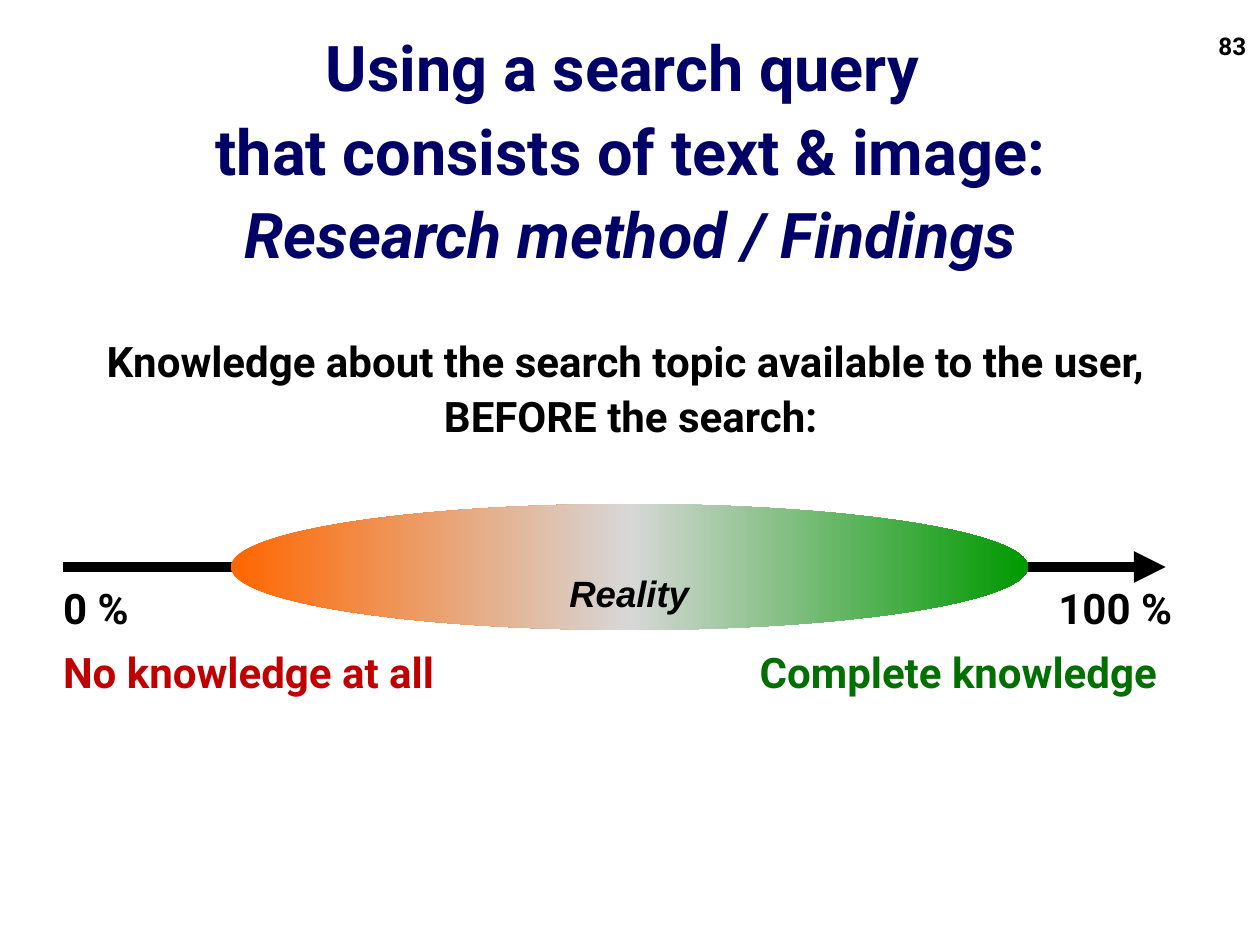
from lxml import etree
from copy import deepcopy
from pptx import Presentation
from pptx.dml.color import RGBColor
from pptx.enum.shapes import MSO_CONNECTOR, MSO_SHAPE
from pptx.enum.text import MSO_ANCHOR, MSO_AUTO_SIZE, PP_ALIGN
from pptx.oxml.ns import qn
from pptx.util import Inches, Pt


def color(hex_string):
    return RGBColor.from_string(hex_string)


def place(shape, left, top, width, height):
    shape.left, shape.top = Inches(left), Inches(top)
    shape.width, shape.height = Inches(width), Inches(height)


def set_frame(frame, side, top, bottom, anchor=MSO_ANCHOR.TOP):
    frame.word_wrap = True
    frame.auto_size = MSO_AUTO_SIZE.NONE
    frame.vertical_anchor = anchor
    frame.margin_left = frame.margin_right = Inches(side)
    frame.margin_top, frame.margin_bottom = Inches(top), Inches(bottom)


def style(paragraph, size, hex_string, name="Roboto", italic=None):
    font = paragraph.font
    font.name, font.size, font.bold, font.italic = name, Pt(size), True, italic
    font.color.rgb = color(hex_string)


def add_lines(paragraph, lines):
    for index, line in enumerate(lines):
        if index:
            paragraph.add_line_break()
        paragraph.add_run().text = line


def add_subscript(paragraph, text):
    run = paragraph.add_run()
    run.text = text
    run._r.get_or_add_rPr().set("baseline", "-25000")


def add_title(slide, left, top, width, height):
    title = slide.shapes.title
    place(title, left, top, width, height)
    set_frame(title.text_frame, 0.08, 0.09, 0.08)
    paragraph = title.text_frame.paragraphs[0]
    paragraph.alignment = PP_ALIGN.CENTER
    paragraph.line_spacing = 1.1
    add_lines(paragraph, ["Using a search query ", "that consists of text & image: "])
    subtitle = paragraph.add_run()
    subtitle.text = "Research method / Findings"
    subtitle.font.italic = True
    style(paragraph, 36, "000066")


def add_body(slide, left, top, width, height):
    body = slide.placeholders[1]
    place(body, left, top, width, height)
    frame = body.text_frame
    set_frame(frame, 0.08, 0.04, 0.04)
    heading = ["Knowledge about the search topic available to the user, ",
               "BEFORE the search:"]
    items = [(heading, PP_ALIGN.CENTER, 0, "000000"),
             (["0 %"], PP_ALIGN.LEFT, 75, "000000"),
             (["No knowledge at all"], PP_ALIGN.LEFT, 2, "C00000")]
    for index, (lines, alignment, space_before, hex_string) in enumerate(items):
        paragraph = frame.add_paragraph() if index else frame.paragraphs[0]
        paragraph.alignment = alignment
        paragraph.line_spacing = 1.1
        paragraph.space_before, paragraph.space_after = Pt(space_before), Pt(3)
        properties = paragraph._p.get_or_add_pPr()
        properties.set("marL", "0")
        properties.set("indent", "0")
        etree.SubElement(properties, qn("a:buNone"))
        add_lines(paragraph, lines)
        style(paragraph, 24, hex_string)


def add_label(slide, text, hex_string, left, top, width, height):
    box = slide.shapes.add_textbox(*map(Inches, (left, top, width, height)))
    set_frame(box.text_frame, 0, 0, 0)
    paragraph = box.text_frame.paragraphs[0]
    paragraph.add_run().text = text
    style(paragraph, 24, hex_string)


def add_page_number(slide, left, top, width, height):
    box = slide.shapes.add_textbox(*map(Inches, (left, top, width, height)))
    set_frame(box.text_frame, 0.1, 0.05, 0.05, MSO_ANCHOR.MIDDLE)
    paragraph = box.text_frame.paragraphs[0]
    paragraph.alignment = PP_ALIGN.RIGHT
    add_subscript(paragraph, "83")
    style(paragraph, 24, "000000")


def add_axis(slide, left, middle, width):
    axis = slide.shapes.add_connector(
        MSO_CONNECTOR.STRAIGHT, Inches(left), Inches(middle),
        Inches(left + width), Inches(middle))
    axis.line.color.rgb = color("000000")
    axis.line.width = Pt(6)
    etree.SubElement(axis.line._get_or_add_ln(), qn("a:tailEnd"), type="triangle")
    etree.SubElement(axis._element.spPr, qn("a:effectLst"))


def fill_gradient(fill, hex_strings):
    fill.gradient()
    fill.gradient_angle = 0
    stop_list = fill._xPr.find(qn("a:gradFill")).find(qn("a:gsLst"))
    stop_list.append(deepcopy(stop_list[0]))
    for index, (stop, hex_string) in enumerate(zip(fill.gradient_stops, hex_strings)):
        stop.position = index / (len(hex_strings) - 1)
        stop.color.rgb = color(hex_string)


def add_knowledge_scale(slide, left, top, width, height):
    add_axis(slide, left, top + height / 2, width)
    ellipse = slide.shapes.add_shape(
        MSO_SHAPE.OVAL, Inches(left + 1.33), Inches(top),
        Inches(6.33), Inches(height))
    ellipse.shadow.inherit = False
    ellipse.line.fill.background()
    fill_gradient(ellipse.fill, ["FF6600", "D7D7D7", "009900"])
    set_frame(ellipse.text_frame, 0.1, 0.13, 0.05, MSO_ANCHOR.MIDDLE)
    paragraph = ellipse.text_frame.paragraphs[0]
    paragraph.alignment = PP_ALIGN.CENTER
    add_subscript(paragraph, "Reality")
    style(paragraph, 36, "000000", "Arial", True)
    add_label(slide, "100 %", "000000", left + 7.9, top + 0.62, 1.1, 0.4)
    add_label(slide, "Complete knowledge", "026F02", left + 5.53, top + 1.13, 3.4, 0.4)


def main():
    presentation = Presentation()
    presentation.slide_width, presentation.slide_height = Inches(10), Inches(7.5)
    slide = presentation.slides.add_slide(presentation.slide_layouts[1])
    add_title(slide, 1.17, 0.08, 7.67, 2.34)
    add_body(slide, 0.42, 2.58, 9.17, 4.75)
    add_page_number(slide, 7.91, 0, 2.08, 0.5)
    add_knowledge_scale(slide, 0.5, 4, 8.75, 1)
    presentation.save("out.pptx")


if __name__ == "__main__":
    main()
